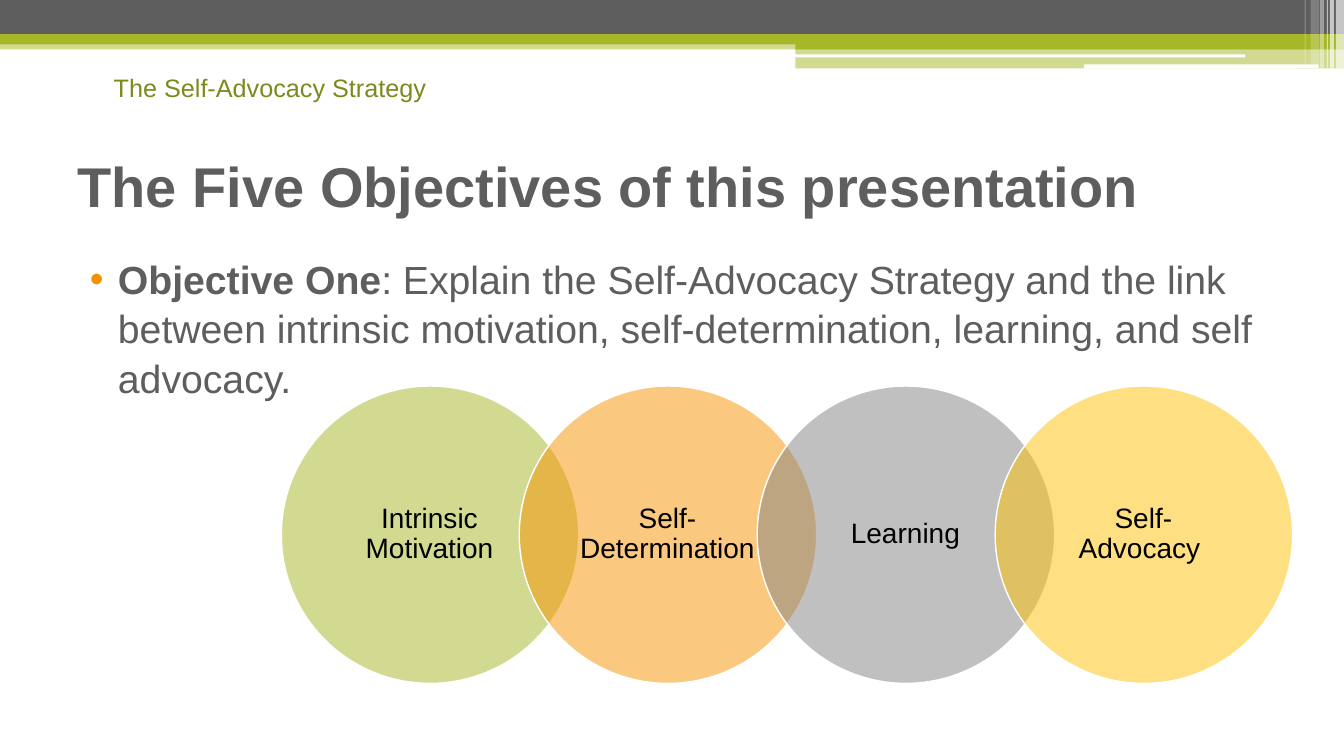
from lxml.etree import SubElement
from pptx import Presentation
from pptx.dml.color import RGBColor
from pptx.enum.shapes import MSO_SHAPE
from pptx.enum.text import MSO_ANCHOR, MSO_AUTO_SIZE, PP_ALIGN
from pptx.oxml.ns import qn
from pptx.util import Pt

SCALE = 9144  # EMU in one px, 100 px to the inch
FONT = "Arial"
GREY = RGBColor(0x5E, 0x5E, 0x5E)
GREEN = RGBColor(0xA6, 0xB7, 0x27)
OLIVE = RGBColor(0x7D, 0x89, 0x1D)
ORANGE = RGBColor(0xF6, 0x92, 0x00)
SILVER = RGBColor(0x83, 0x83, 0x83)
GOLD = RGBColor(0xFE, 0xC3, 0x06)
WHITE = RGBColor(0xFF, 0xFF, 0xFF)
BLACK = RGBColor(0x00, 0x00, 0x00)


def px(num):
    return num * SCALE


class Deck:
    def __init__(self, wide, high):
        self.prs = Presentation()
        self.prs.slide_width, self.prs.slide_height = px(wide), px(high)
        self.slide = self.prs.slides.add_slide(self.prs.slide_layouts[1])

    def shape(self, kind, box, color, alpha=100, edge=None):
        item = self.slide.shapes.add_shape(kind, *map(px, box))
        item.shadow.inherit = False
        item.fill.solid()
        item.fill.fore_color.rgb = color
        if alpha < 100:
            tone = item._element.spPr.find(qn("a:solidFill"))[0]
            SubElement(tone, qn("a:alpha"), val=str(alpha * 1000))
        if edge is None:
            item.line.fill.background()
        else:
            item.line.color.rgb = edge
            item.line.width = Pt(1)
        return item

    def runs(self, para, parts, size, color):
        for text, bold in parts:
            run = para.add_run()
            run.text = text
            font = run.font
            font.name, font.size, font.bold = FONT, Pt(size), bold
            font.color.rgb = color

    def label(self, box, text, size, color, wrap=True):
        frame = self.slide.shapes.add_textbox(*map(px, box)).text_frame
        frame.word_wrap = wrap
        self.runs(frame.paragraphs[0], [(text, False)], size, color)
        return frame

    def holder(self, item, box, parts, size, anchor):
        item.left, item.top, item.width, item.height = map(px, box)
        frame = item.text_frame
        frame.auto_size = MSO_AUTO_SIZE.NONE
        frame.vertical_anchor = anchor
        para = frame.paragraphs[0]
        para.alignment = PP_ALIGN.LEFT
        para.space_before = Pt(0)
        self.runs(para, parts, size, GREY)
        return para

    def title(self, box, text):
        self.holder(self.slide.shapes.title, box, [(text, True)], 40,
                    MSO_ANCHOR.MIDDLE)

    def body(self, box, parts):
        para = self.holder(self.slide.placeholders[1], box, parts, 28,
                           MSO_ANCHOR.TOP)
        para.line_spacing = 1.05
        props = para._p.get_or_add_pPr()
        props.set("marL", str(px(40)))
        props.set("indent", str(px(-28)))
        tint = SubElement(props, qn("a:buClr"))
        SubElement(tint, qn("a:srgbClr"), val=str(ORANGE))
        SubElement(props, qn("a:buFont"), typeface=FONT)
        SubElement(props, qn("a:buChar"), char="•")

    def circle(self, left, top, size, color, text):
        self.shape(MSO_SHAPE.OVAL, (left, top, size, size), color, 50, WHITE)
        gap = 43
        side = size - 2 * gap - 1
        frame = self.label((left + gap, top + gap, side, side), text, 20, BLACK)
        frame.vertical_anchor = MSO_ANCHOR.MIDDLE
        frame.margin_left = frame.margin_right = px(16)
        frame.margin_top = frame.margin_bottom = px(3)
        para = frame.paragraphs[0]
        para.alignment = PP_ALIGN.CENTER
        para.line_spacing = 0.9


def main():
    deck = Deck(1333, 750)

    # Top bands
    for box, color, alpha in [
        ((0, 40, 1333, 9), GREEN, 50),
        ((0, 0, 1333, 34), GREY, 100),
        ((0, 34, 1333, 10), GREEN, 100),
        ((789, 39, 544, 10), GREEN, 100),
        ((789, 48, 544, 20), GREEN, 50),
    ]:
        deck.shape(MSO_SHAPE.RECTANGLE, box, color, alpha)

    # White slits in the bands
    for box in [(788, 54, 447, 3), (1075, 64, 233, 4)]:
        deck.shape(MSO_SHAPE.ROUNDED_RECTANGLE, box, WHITE)

    # Pale stripes in the corner
    for left, wide, high, alpha in [
        (1325, 8, 68, 65), (1319, 4, 68, 65), (1316, 1, 68, 60),
        (1309, 4, 68, 40), (1300, 8, 64, 20), (1294, 1, 64, 30),
    ]:
        deck.shape(MSO_SHAPE.RECTANGLE, (left, 0, wide, high), WHITE, alpha)

    # Header, title and objective
    deck.label((103, 67, 333, 40), "The Self-Advocacy Strategy", 18, OLIVE, False)
    deck.title((67, 125, 1200, 117), "The Five Objectives of this presentation")
    deck.body((67, 246, 1200, 177), [
        ("Objective One", True),
        (": Explain the Self-Advocacy Strategy and the link between intrinsic "
         "motivation, self-determination, learning, and self advocacy.", False),
    ])

    # Chain of linked circles
    links = [("Intrinsic Motivation", GREEN), ("Self-Determination", ORANGE),
             ("Learning", SILVER), ("Self-Advocacy ", GOLD)]
    for step, (text, color) in enumerate(links):
        deck.circle(279 + 236 * step, 383, 295, color, text)

    deck.prs.save("out.pptx")


if __name__ == "__main__":
    main()
